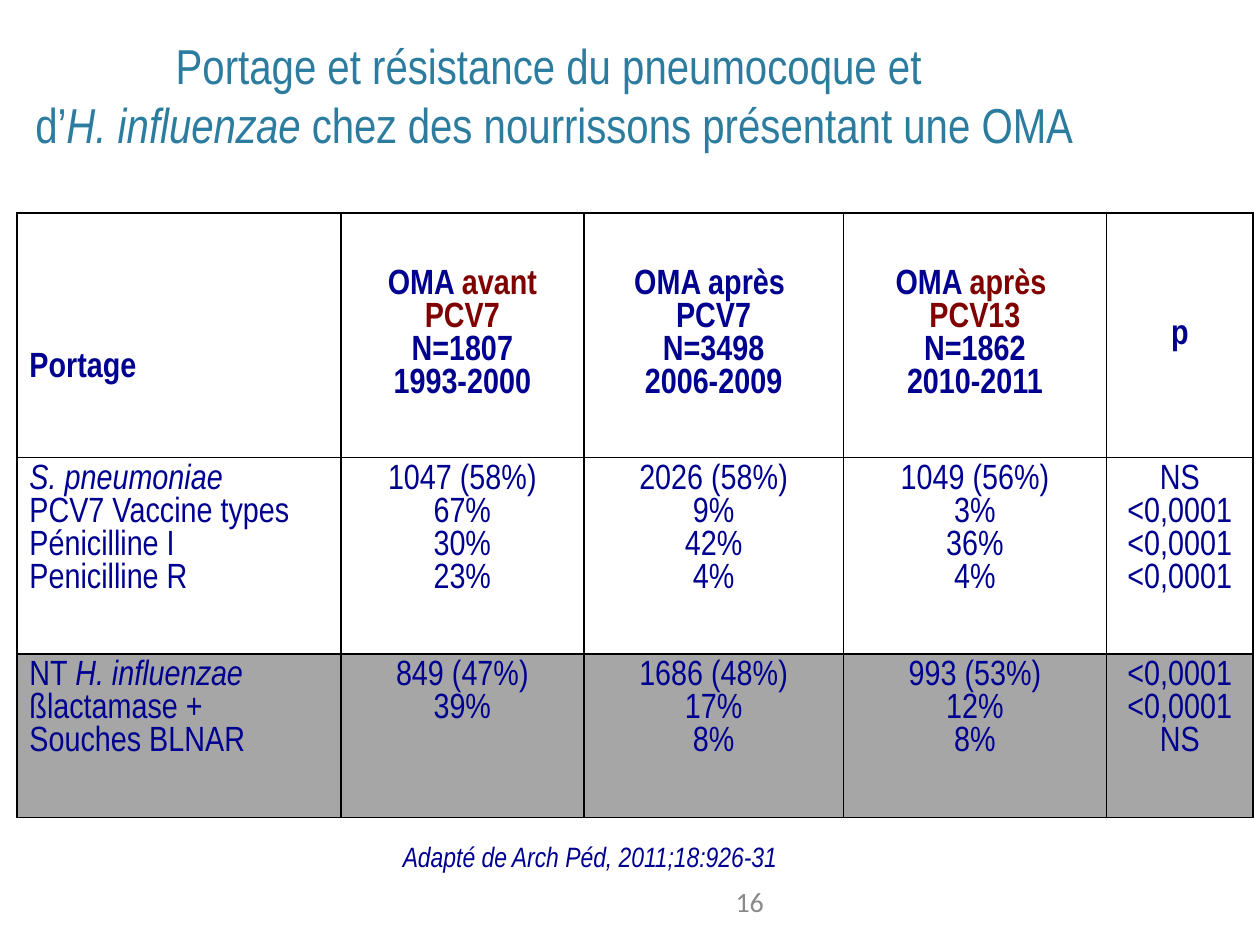
from dataclasses import dataclass

from lxml import etree
from pptx import Presentation
from pptx import util as u
from pptx.dml.color import RGBColor
from pptx.enum import text
from pptx.oxml import ns

LEFT, CENTER, RIGHT = text.PP_ALIGN.LEFT, text.PP_ALIGN.CENTER, text.PP_ALIGN.RIGHT
TOP, MIDDLE, BOTTOM = (text.MSO_ANCHOR.TOP, text.MSO_ANCHOR.MIDDLE,
                       text.MSO_ANCHOR.BOTTOM)


@dataclass(frozen=True)
class Theme:
    title: str = "2C7C9F"
    body: str = "000090"
    accent: str = "800000"
    number: str = "898989"
    rule: str = "000000"
    plain: str = "FFFFFF"
    shaded: str = "A6A6A6"
    font: str = "Arial Narrow"
    number_font: str = "Calibri"
    title_size: int = 28
    table_size: int = 20
    note_size: int = 16


THEME = Theme()
ITALIC = {"italic": True}
ACCENT = {"color": THEME.accent}

COLUMNS = (6.53, 4.9, 5.23, 5.31, 2.95)
ROWS = (4.93, 3.96, 3.3)

# A cell is a list of paragraphs; a paragraph is text or a list of (text, format).
HEADER = [
    ["Portage"],
    [[("OMA ", {}), ("avant PCV7", ACCENT)], "N=1807", "1993-2000"],
    ["OMA après \vPCV7", "N=3498", "2006-2009"],
    [[("OMA ", {}), ("après \vPCV13", ACCENT)], "N=1862", "2010-2011"],
    ["p"],
]
PNEUMOCOCCUS = [
    [[("S. pneumoniae", ITALIC)], "PCV7 Vaccine types", "Pénicilline I", "Penicilline R"],
    ["1047 (58%)", "67%", "30%", "23%"],
    ["2026 (58%)", "9%", "42%", "4%"],
    ["1049 (56%)", "3%", "36%", "4%"],
    ["NS", "<0,0001", "<0,0001", "<0,0001"],
]
HAEMOPHILUS = [
    [[("NT ", {}), ("H. influenzae", ITALIC)], "ßlactamase +", "Souches BLNAR"],
    ["849 (47%)", "39%"],
    ["1686 (48%)", "17%", "8%"],
    ["993 (53%)", "12%", "8%"],
    ["<0,0001", "<0,0001", "NS"],
]


def write(frame, paragraphs, align=LEFT, **base):
    """Fill a text frame; each span may override the base format."""
    for index, content in enumerate(paragraphs):
        para = frame.paragraphs[0] if index == 0 else frame.add_paragraph()
        para.alignment = align
        para.line_spacing = 1.0
        para.space_before = para.space_after = u.Pt(0)
        spans = [(content, {})] if isinstance(content, str) else content
        for words, changes in spans:
            style = {"font": THEME.font, "color": THEME.body, "bold": False,
                     "italic": False, **base, **changes}
            for number, line in enumerate(words.split("\v")):
                if number:
                    para.add_line_break()
                span = para.add_run()
                span.text = line
                span.font.name = style["font"]
                span.font.size = u.Pt(style["size"])
                span.font.bold = style["bold"]
                span.font.italic = style["italic"]
                span.font.color.rgb = RGBColor.from_string(style["color"])


def place(shape, left, top, width, height):
    shape.left, shape.top = u.Cm(left), u.Cm(top)
    shape.width, shape.height = u.Cm(width), u.Cm(height)


def add_title(page, *area):
    box = page.shapes.title
    place(box, *area)
    frame = box.text_frame
    frame.word_wrap = True
    frame.auto_size = text.MSO_AUTO_SIZE.NONE
    frame.vertical_anchor = BOTTOM
    frame.margin_left = frame.margin_right = u.Cm(0.25)
    frame.margin_bottom = u.Cm(1.33)
    write(frame, [[("Portage et résistance du pneumocoque et \vd’", {}),
                   ("H. influenzae ", ITALIC),
                   ("chez des nourrissons présentant une OMA", {})]],
          align=CENTER, size=THEME.title_size, color=THEME.title)


def add_borders(cell):
    properties = cell._tc.get_or_add_tcPr()
    for side in ("a:lnL", "a:lnR", "a:lnT", "a:lnB"):
        line = etree.SubElement(properties, ns.qn(side), w=str(u.Pt(1)))
        fill = etree.SubElement(line, ns.qn("a:solidFill"))
        etree.SubElement(fill, ns.qn("a:srgbClr"), val=THEME.rule)


def add_results(page, left, top):
    rows = (HEADER, PNEUMOCOCCUS, HAEMOPHILUS)
    table = page.shapes.add_table(
        len(ROWS), len(COLUMNS), u.Cm(left), u.Cm(top),
        u.Cm(sum(COLUMNS)), u.Cm(sum(ROWS))).table
    for column, width in zip(table.columns, COLUMNS):
        column.width = u.Cm(width)
    for row, height in zip(table.rows, ROWS):
        row.height = u.Cm(height)
    for r, contents in enumerate(rows):
        for c, paragraphs in enumerate(contents):
            cell = table.cell(r, c)
            add_borders(cell)
            cell.fill.solid()
            cell.fill.fore_color.rgb = RGBColor.from_string(
                THEME.shaded if contents is HAEMOPHILUS else THEME.plain)
            cell.vertical_anchor = TOP if r else MIDDLE
            write(cell.text_frame, paragraphs, align=CENTER if c else LEFT,
                  size=THEME.table_size, bold=r == 0)
    # The row heading sits below the middle of the header row.
    table.cell(0, 0).margin_top = u.Cm(1.46)


def add_label(page, area, words, anchor=TOP, **style):
    box = page.shapes.add_textbox(0, 0, 0, 0)
    place(box, *area)
    box.text_frame.word_wrap = True
    box.text_frame.vertical_anchor = anchor
    write(box.text_frame, [words], size=THEME.note_size, **style)


def main():
    deck = Presentation()
    deck.slide_width, deck.slide_height = u.Cm(25.4), u.Cm(19.05)
    page = deck.slides.add_slide(deck.slide_layouts[5])
    add_title(page, -0.2, 1.93, 22.73, 2.49)
    add_results(page, 0.34, 4.29)
    add_label(page, (7.87, 16.79, 9.65, 1.45),
              "Adapté de Arch Péd, 2011;18:926-31", italic=True)
    add_label(page, (9.73, 17.65, 5.92, 1.02), "16", anchor=MIDDLE, align=RIGHT,
              font=THEME.number_font, color=THEME.number)
    deck.save("out.pptx")


if __name__ == "__main__":
    main()
